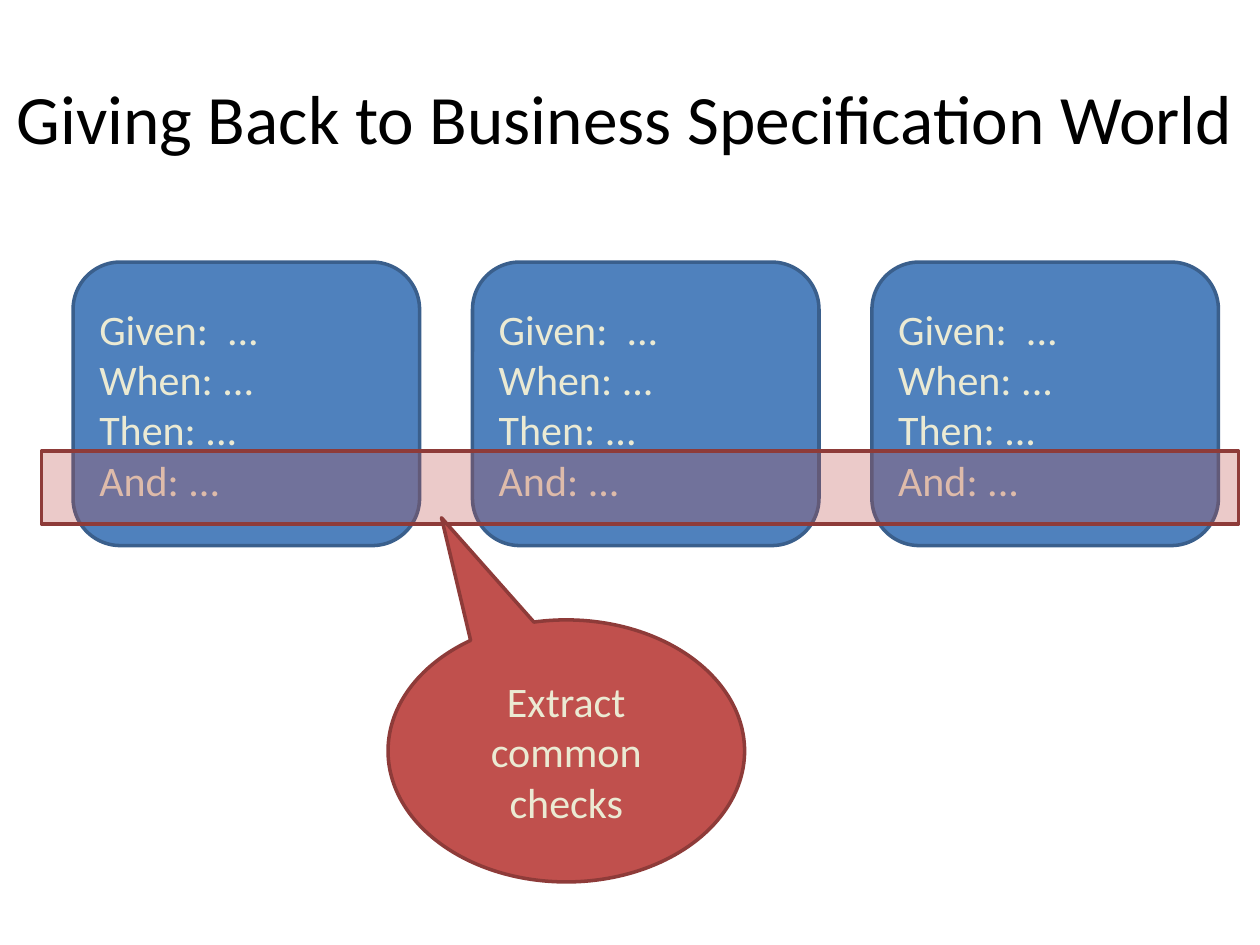
from dataclasses import dataclass

from lxml.etree import SubElement
from pptx import Presentation
from pptx.dml.color import RGBColor
from pptx.enum.shapes import MSO_SHAPE
from pptx.enum.text import MSO_ANCHOR, PP_ALIGN
from pptx.oxml.ns import qn
from pptx.shapes.autoshape import Shape
from pptx.slide import Slide
from pptx.util import Inches, Pt

BLACK = RGBColor(0x00, 0x00, 0x00)
CREAM = RGBColor(0xEB, 0xEA, 0xD3)
BLUE = RGBColor(0x4F, 0x81, 0xBD)
NAVY = RGBColor(0x3A, 0x5F, 0x8C)
RED = RGBColor(0xC0, 0x50, 0x4D)
MAROON = RGBColor(0x8E, 0x3B, 0x39)
FONT = "Calibri"
STEPS = "Given:  ...\nWhen: ...\nThen: ...\nAnd: ..."


@dataclass
class Box:
    kind: MSO_SHAPE
    left: float
    top: float
    width: float
    height: float
    fill: RGBColor
    line: RGBColor
    text: str = ""
    align: PP_ALIGN = PP_ALIGN.LEFT


def write(shape: Shape, text: str, size: float, color: RGBColor, align: PP_ALIGN) -> None:
    frame = shape.text_frame
    frame.word_wrap = True
    frame.vertical_anchor = MSO_ANCHOR.MIDDLE
    frame.text = text
    for para in frame.paragraphs:
        para.alignment = align
        for run in para.runs:
            run.font.name = FONT
            run.font.size = Pt(size)
            run.font.color.rgb = color


def draw(slide: Slide, box: Box) -> Shape:
    shape = slide.shapes.add_shape(
        box.kind, Inches(box.left), Inches(box.top), Inches(box.width), Inches(box.height)
    )
    shape.shadow.inherit = False
    shape.fill.solid()
    shape.fill.fore_color.rgb = box.fill
    shape.line.color.rgb = box.line
    shape.line.width = Pt(2)
    if box.text:
        write(shape, box.text, 24, CREAM, box.align)
    return shape


def fade(shape: Shape, percent: int) -> None:
    color = shape.fill._xPr.find(qn("a:solidFill"))[0]
    SubElement(color, qn("a:alpha")).set("val", str(percent * 1000))


def main() -> None:
    deck = Presentation()
    deck.slide_width, deck.slide_height = Inches(10), Inches(7.5)
    slide = deck.slides.add_slide(deck.slide_layouts[6])

    title = slide.shapes.add_textbox(Inches(-0.08), Inches(0.3), Inches(10.08), Inches(1.25))
    write(title, "Giving Back to Business Specification World", 39.6, BLACK, PP_ALIGN.CENTER)

    for index in range(3):
        left = 0.58 + 3.17 * index
        draw(slide, Box(MSO_SHAPE.ROUNDED_RECTANGLE, left, 2.08, 2.75, 2.25, BLUE, NAVY, STEPS))

    band = draw(slide, Box(MSO_SHAPE.RECTANGLE, 0.33, 3.58, 9.5, 0.58, RED, MAROON))
    fade(band, 30)

    bubble = draw(slide, Box(
        MSO_SHAPE.OVAL_CALLOUT, 3.08, 4.92, 2.83, 2.08, RED, MAROON,
        "Extract common checks", PP_ALIGN.CENTER,
    ))
    bubble.adjustments[0] = -0.35
    bubble.adjustments[1] = -0.89

    deck.save("out.pptx")


if __name__ == "__main__":
    main()
